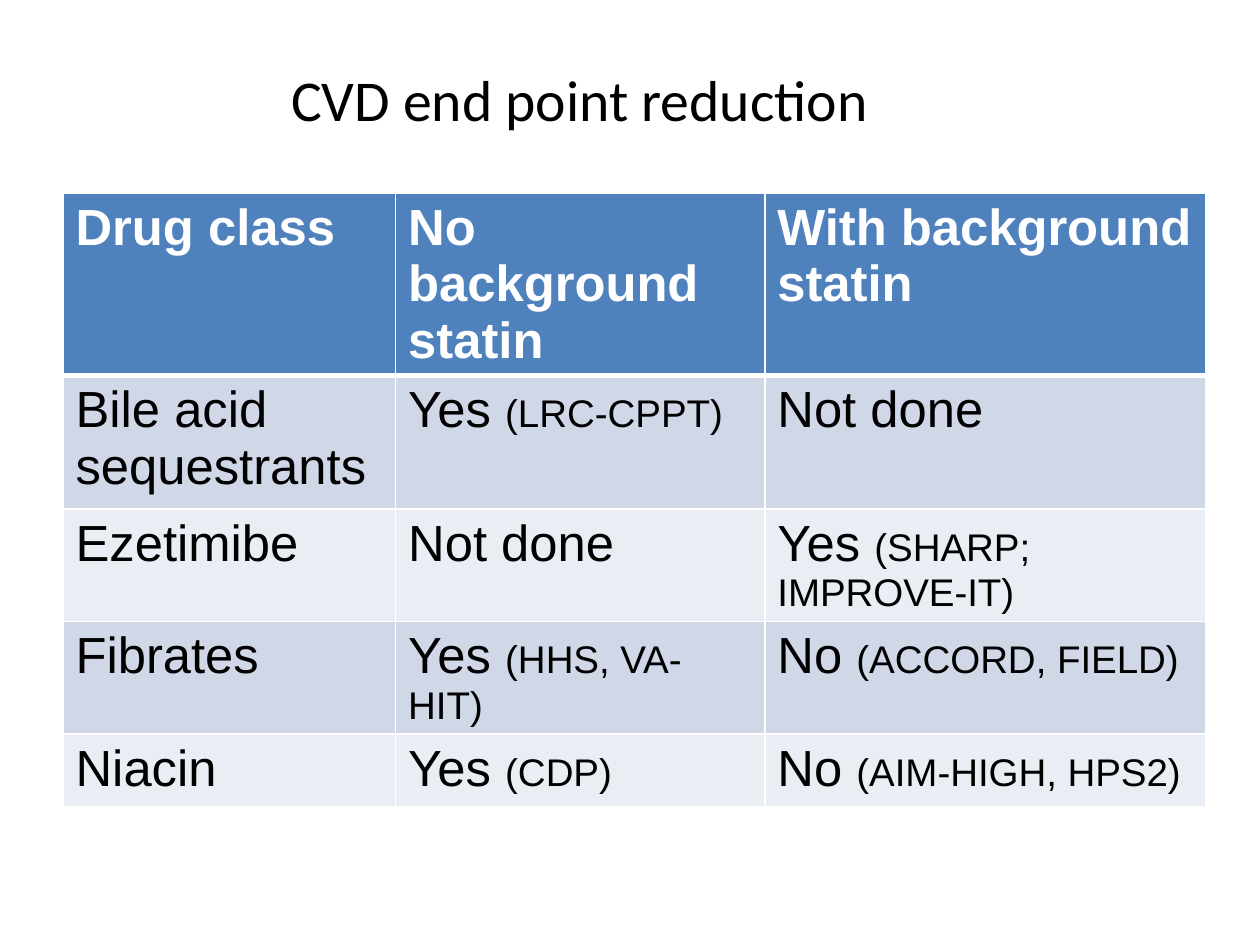
from dataclasses import dataclass

from lxml.etree import SubElement
from pptx import Presentation
from pptx.dml.color import RGBColor
from pptx.enum.text import MSO_ANCHOR, PP_ALIGN
from pptx.oxml.ns import qn
from pptx.util import Inches, Pt


@dataclass(frozen=True)
class Theme:
    head: str = "4F81BD"
    bands: tuple[str, str] = ("D0D8E8", "E9EDF4")
    ink: str = "000000"
    light: str = "FFFFFF"
    title: int = 33
    body: int = 29
    note: int = 22
    thin: int = 1
    thick: int = 3


@dataclass(frozen=True)
class Entry:
    text: str
    trials: str = ""


THEME = Theme()
COLS = (2.64, 2.93, 3.5)
HEIGHTS = (1.06, 1.06, 0.58, 0.58, 0.58)
ROWS = (
    (Entry("Drug class"), Entry("No background statin"),
     Entry("With background statin")),
    (Entry("Bile acid sequestrants"), Entry("Yes ", "(LRC-CPPT)"),
     Entry("Not done")),
    (Entry("Ezetimibe"), Entry("Not done"),
     Entry("Yes ", "(SHARP; IMPROVE-IT)")),
    (Entry("Fibrates"), Entry("Yes ", "(HHS, VA-HIT)"),
     Entry("No ", "(ACCORD, FIELD)")),
    (Entry("Niacin"), Entry("Yes ", "(CDP)"),
     Entry("No ", "(AIM-HIGH, HPS2)")),
)


def style(run, face: str, size: int, color: str, bold: bool = False) -> None:
    font = run.font
    font.name, font.size, font.bold = face, Pt(size), bold
    font.color.rgb = RGBColor.from_string(color)


def edge(cell, side: str, width: int) -> None:
    props = cell._tc.get_or_add_tcPr()
    line = SubElement(props, qn(f"a:ln{side}"), w=str(Pt(width)))
    fill = SubElement(line, qn("a:solidFill"))
    SubElement(fill, qn("a:srgbClr"), val=THEME.light)


def draw_cell(cell, entry: Entry, row: int) -> None:
    head = row == 0
    # Borders come before the fill in the cell properties
    for side in "LRTB":
        rule = (row, side) in ((0, "B"), (1, "T"))
        edge(cell, side, THEME.thick if rule else THEME.thin)
    cell.fill.solid()
    back = THEME.head if head else THEME.bands[(row - 1) % 2]
    cell.fill.fore_color.rgb = RGBColor.from_string(back)

    # Verdict in body size, trial names smaller
    para = cell.text_frame.paragraphs[0]
    para.text = entry.text
    color = THEME.light if head else THEME.ink
    style(para.runs[0], "Arial", THEME.body, color, head)
    if entry.trials:
        run = para.add_run()
        run.text = entry.trials
        style(run, "Arial", THEME.note, color)


def draw_title(shape, text: str) -> None:
    shape.left, shape.top = Inches(2.21), Inches(0.46)
    shape.width, shape.height = Inches(4.82), Inches(0.65)
    frame = shape.text_frame
    frame.text = text
    frame.word_wrap = False
    frame.vertical_anchor = MSO_ANCHOR.TOP
    para = frame.paragraphs[0]
    para.alignment = PP_ALIGN.LEFT
    style(para.runs[0], "Calibri", THEME.title, THEME.ink)


def draw_table(slide) -> None:
    table = slide.shapes.add_table(
        len(ROWS), len(COLS), Inches(0.5), Inches(1.53),
        Inches(sum(COLS)), Inches(sum(HEIGHTS))).table
    for col, width in zip(table.columns, COLS):
        col.width = Inches(width)
    for row, height in zip(table.rows, HEIGHTS):
        row.height = Inches(height)
    for r, entries in enumerate(ROWS):
        for c, entry in enumerate(entries):
            draw_cell(table.cell(r, c), entry, r)


def main() -> None:
    deck = Presentation()
    deck.slide_width, deck.slide_height = Inches(10), Inches(7.5)
    slide = deck.slides.add_slide(deck.slide_layouts[5])
    draw_title(slide.shapes.title, "CVD end point reduction")
    draw_table(slide)
    deck.save("out.pptx")


if __name__ == "__main__":
    main()
